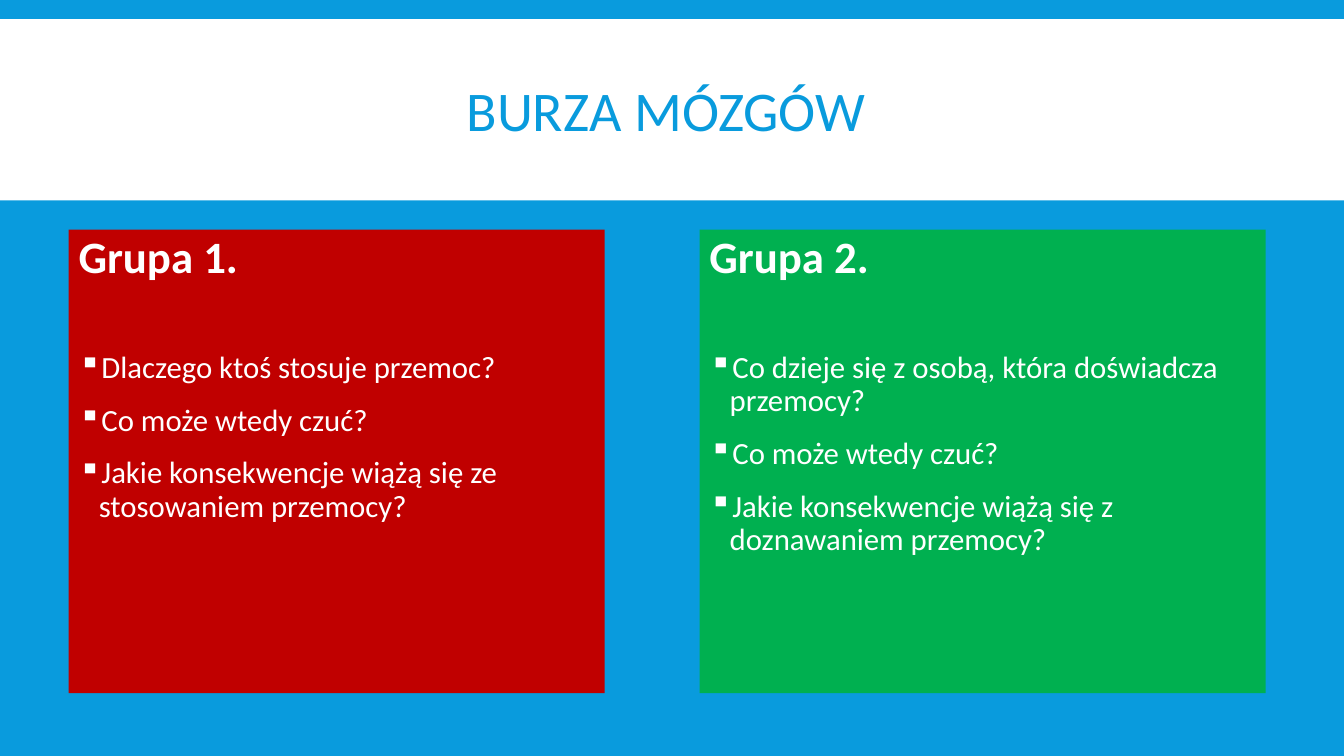
from dataclasses import dataclass

from lxml.etree import SubElement
from pptx import Presentation
from pptx.dml.color import RGBColor
from pptx.enum.shapes import MSO_SHAPE
from pptx.enum.text import MSO_ANCHOR, MSO_AUTO_SIZE, PP_ALIGN
from pptx.oxml.ns import qn
from pptx.shapes.autoshape import Shape
from pptx.slide import Slide
from pptx.util import Cm, Pt

COLOURS = {
    "blue": "099BDD",
    "white": "FFFFFF",
    "red": "C00000",
    "green": "00B050",
}
FONT = "Calibri"
PAGE_WIDTH = 33.87
CARD_TOP, CARD_HEIGHT = 5.79, 11.68


@dataclass
class GroupCard:
    heading: str
    questions: list[str]
    colour: str
    left: float
    width: float


CARDS = [
    GroupCard(
        "Grupa 1.",
        [
            "Dlaczego ktoś stosuje przemoc?",
            "Co może wtedy czuć?",
            "Jakie konsekwencje wiążą się ze stosowaniem przemocy?",
        ],
        "red", 1.73, 13.51,
    ),
    GroupCard(
        "Grupa 2.",
        [
            "Co dzieje się z osobą, która doświadcza przemocy?",
            "Co może wtedy czuć?",
            "Jakie konsekwencje wiążą się z doznawaniem przemocy?",
        ],
        "green", 17.63, 14.27,
    ),
]


def colour(name: str) -> RGBColor:
    return RGBColor.from_string(COLOURS[name])


def add_rectangle(page: Slide, left: float, top: float, width: float,
                  height: float, fill: str) -> Shape:
    box = page.shapes.add_shape(
        MSO_SHAPE.RECTANGLE, Cm(left), Cm(top), Cm(width), Cm(height))
    box.shadow.inherit = False
    box.fill.solid()
    box.fill.fore_color.rgb = colour(fill)
    box.line.fill.background()
    return box


def add_span(para, text: str, size: int, ink: str, bold: bool = False) -> None:
    span = para.add_run()
    span.text = text
    span.font.name = FONT
    span.font.size = Pt(size)
    span.font.bold = bold
    span.font.color.rgb = colour(ink)


def format_card_paragraph(para, space_after: int) -> None:
    para.alignment = PP_ALIGN.LEFT
    para.line_spacing = 0.9
    para.space_before = Pt(12)
    para.space_after = Pt(space_after)


def add_bullet(para) -> None:
    """Give the paragraph a white square bullet with a hanging indent."""
    properties = para._p.get_or_add_pPr()
    properties.set("marL", str(Cm(0.51)))
    properties.set("indent", str(-Cm(0.51)))
    bullet_colour = SubElement(properties, qn("a:buClr"))
    SubElement(bullet_colour, qn("a:srgbClr"), val=COLOURS["white"])
    SubElement(properties, qn("a:buChar"), char="▪")


def add_title(page: Slide) -> None:
    title = page.shapes.title
    title.left, title.top = Cm(3.35), Cm(0.79)
    title.width, title.height = Cm(27.18), Cm(4.19)
    frame = title.text_frame
    frame.auto_size = MSO_AUTO_SIZE.NONE
    frame.vertical_anchor = MSO_ANCHOR.MIDDLE
    para = frame.paragraphs[0]
    para.alignment = PP_ALIGN.CENTER
    para.line_spacing = 0.85
    add_span(para, "BURZA MÓZGÓW ", 40, "blue")
    band = add_rectangle(page, 0, 0.48, PAGE_WIDTH, 4.57, "white")
    title.element.addprevious(band.element)


def add_card(page: Slide, card: GroupCard) -> None:
    box = add_rectangle(
        page, card.left, CARD_TOP, card.width, CARD_HEIGHT, card.colour)
    frame = box.text_frame
    frame.word_wrap = True
    frame.vertical_anchor = MSO_ANCHOR.TOP
    heading = frame.paragraphs[0]
    format_card_paragraph(heading, space_after=37)
    add_span(heading, card.heading, 32, "white", bold=True)
    for question in card.questions:
        para = frame.add_paragraph()
        format_card_paragraph(para, space_after=2)
        add_bullet(para)
        add_span(para, question, 22, "white")


def main() -> None:
    deck = Presentation()
    deck.slide_width, deck.slide_height = Cm(PAGE_WIDTH), Cm(19.05)
    page = deck.slides.add_slide(deck.slide_layouts[5])
    page.background.fill.solid()
    page.background.fill.fore_color.rgb = colour("blue")
    add_title(page)
    for card in CARDS:
        add_card(page, card)
    deck.save("out.pptx")


if __name__ == "__main__":
    main()
